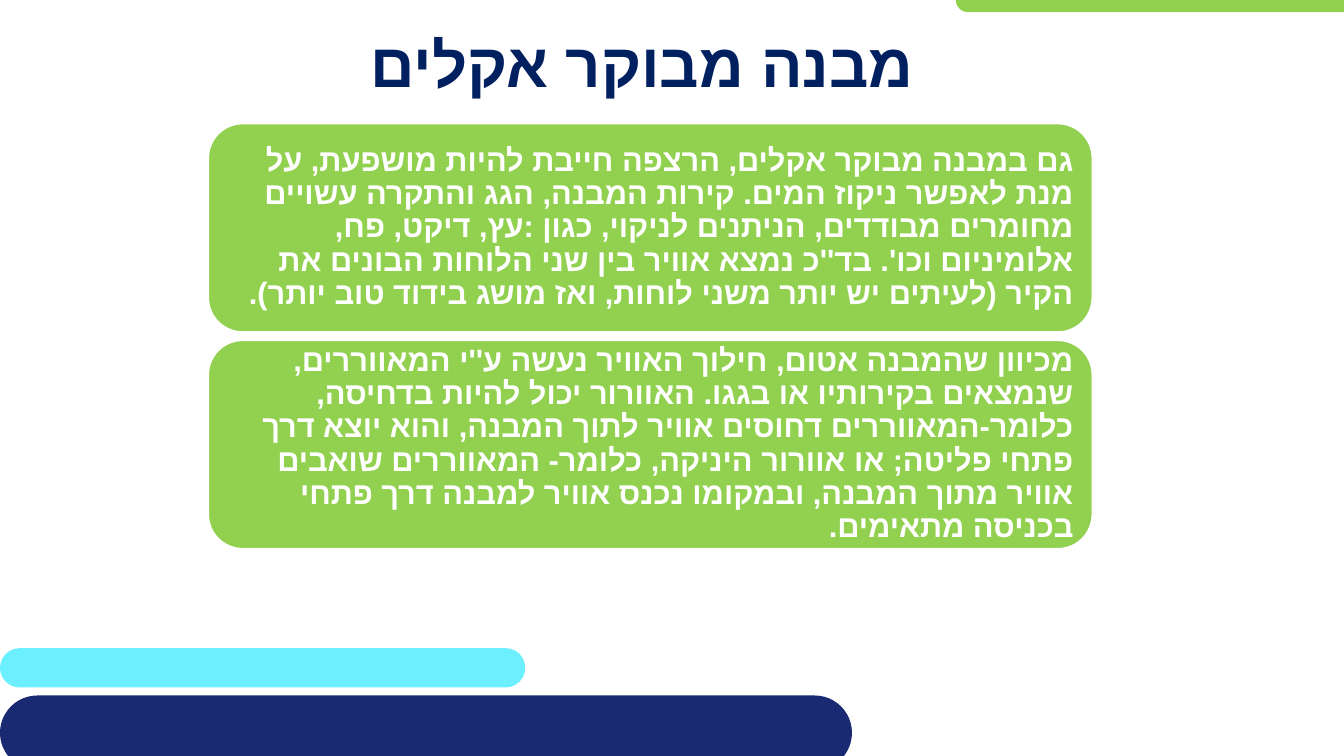
from pptx import Presentation
from pptx.dml.color import RGBColor
from pptx.enum.shapes import MSO_SHAPE
from pptx.enum.text import MSO_ANCHOR, PP_ALIGN
from pptx.util import Inches, Pt
from lxml.etree import SubElement
from pptx.oxml.ns import qn

GREEN, WHITE, NAVY = "92D050", "FFFFFF", "002060"
BANDS = [
    ((0, 6.43, 5.21, 0.39), "6CF0FF"),
    ((9.48, -0.12, 5.8, 0.24), GREEN),
    ((0, 6.9, 8.45, 0.74), "192A72"),
]
TITLE = "מבנה מבוקר אקלים"
PANELS = [
    "גם במבנה מבוקר אקלים, הרצפה חייבת להיות מושפעת, על מנת לאפשר ניקוז המים. "
    "קירות המבנה, הגג והתקרה עשויים מחומרים מבודדים, הניתנים לניקוי, כגון :עץ, דיקט, פח, "
    "אלומיניום וכו'. בד''כ נמצא אוויר בין שני הלוחות הבונים את הקיר "
    "(לעיתים יש יותר משני לוחות, ואז מושג בידוד טוב יותר).",
    "מכיוון שהמבנה אטום, חילוך האוויר נעשה ע''י המאווררים, שנמצאים בקירותיו או בגגו. "
    "האוורור יכול להיות בדחיסה, כלומר-המאווררים דחוסים אוויר לתוך המבנה, והוא יוצא דרך "
    "פתחי פליטה; או אוורור היניקה, כלומר- המאווררים שואבים אוויר מתוך המבנה, "
    "ובמקומו נכנס אוויר למבנה דרך פתחי בכניסה מתאימים.",
]


def color(value):
    return RGBColor.from_string(value)


def set_all(obj, values):
    for name, value in values.items():
        setattr(obj, name, value)


def rounded(s, box, fill):
    sp = s.shapes.add_shape(MSO_SHAPE.ROUNDED_RECTANGLE, *map(Inches, box))
    sp.shadow.inherit = False
    sp.fill.solid()
    sp.fill.fore_color.rgb = color(fill)
    sp.line.fill.background()
    return sp


def write_hebrew(tf, text, size, fill, align, margins, spacing, indent=0):
    side, top = map(Inches, margins)
    set_all(tf, {"word_wrap": True, "vertical_anchor": MSO_ANCHOR.MIDDLE,
                 "margin_left": side, "margin_right": side,
                 "margin_top": top, "margin_bottom": top})
    p = tf.paragraphs[0]
    set_all(p, {"alignment": align, "line_spacing": spacing,
                "space_before": Pt(0)})
    pPr = p._p.get_or_add_pPr()
    for name, value in {"rtl": 1, "marL": Inches(indent), "indent": 0}.items():
        pPr.set(name, str(value))
    r = p.add_run()
    r.text = text
    set_all(r.font, {"name": "Quicksand", "size": Pt(size), "bold": True})
    r.font.color.rgb = color(fill)
    SubElement(r.font._element, qn("a:cs"), typeface="Arial")


def add_bands(s):
    for box, fill in BANDS:
        rounded(s, box, fill).adjustments[0] = 0.5


def add_title(s, box):
    sp = s.shapes.title
    x, y, w, h = map(Inches, box)
    set_all(sp, {"left": x, "top": y, "width": w, "height": h})
    write_hebrew(sp.text_frame, TITLE, 44, NAVY, PP_ALIGN.CENTER,
                 (0.04, 0), 1.0, 0.59)


def add_panels(s, box, gap):
    x, y, w, h = box
    height = (h - gap * (len(PANELS) - 1)) / len(PANELS)
    for i, text in enumerate(PANELS):
        sp = rounded(s, (x, y + i * (height + gap), w, height), GREEN)
        sp.line.color.rgb = color(WHITE)
        sp.line.width = Pt(2)
        write_hebrew(sp.text_frame, text, 22, WHITE, PP_ALIGN.RIGHT,
                     (0.09, 0.09), 0.9)


def main():
    prs = Presentation()
    set_all(prs, {"slide_width": Inches(13.33), "slide_height": Inches(7.5)})
    s = prs.slides.add_slide(prs.slide_layouts[5])
    add_bands(s)
    add_title(s, (0, 0.23, 13.33, 0.79))
    add_panels(s, (2.06, 1.22, 8.78, 4.23), 0.07)
    prs.save("out.pptx")


if __name__ == "__main__":
    main()
